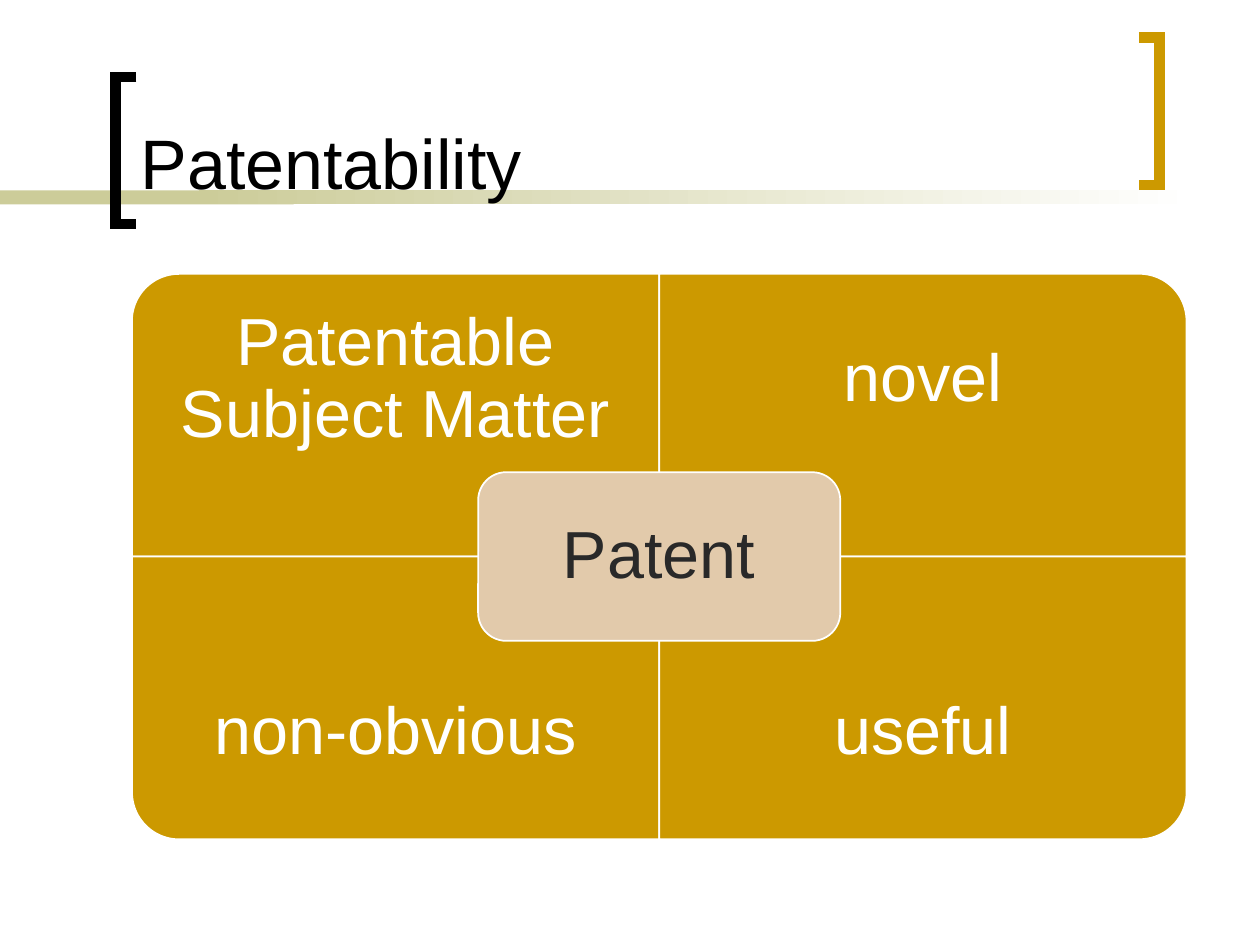
from dataclasses import dataclass

from lxml import etree
from pptx import Presentation
from pptx import util as u
from pptx.dml import color
from pptx.enum import shapes, text
from pptx.oxml import ns

HUES = {
    "black": "000000", "white": "FFFFFF", "gold": "CC9900",
    "sage": "CCCC99", "tan": "E2CAAB", "dark": "292929",
}
FONT = "Arial"

# Matrix of four quadrants, in cm
LEFT, TOP = 2.66, 5.52
WIDE, HIGH = 10.63, 5.7
TEXT_HIGH = 0.75 * HIGH
HUB_WIDE, HUB_HIGH = 7.3, 3.4


@dataclass
class Quad:
    label: str
    col: int
    row: int
    turn: int


@dataclass
class Bracket:
    hue: str
    spine: float
    tip: float
    top: float


QUADS = [
    Quad("Patentable Subject Matter", 0, 0, 270),
    Quad("novel", 1, 0, 0),
    Quad("non-obvious", 0, 1, 180),
    Quad("useful", 1, 1, 90),
]
BRACKETS = [
    Bracket("black", 2.33, 2.75, 1.55),
    Bracket("gold", 23.38, 22.96, 0.76),
]
BRACKET_HIGH = 2.97


def rgb(hue: str) -> color.RGBColor:
    return color.RGBColor.from_string(HUES[hue])


def add_box(slide, kind, x: float, y: float, w: float, h: float,
            fill: str, line: str = ""):
    box = slide.shapes.add_shape(kind, u.Cm(x), u.Cm(y), u.Cm(w), u.Cm(h))
    box.shadow.inherit = False
    box.fill.solid()
    box.fill.fore_color.rgb = rgb(fill)
    if line:
        box.line.color.rgb = rgb(line)
        box.line.width = u.Pt(1)
    else:
        box.line.fill.background()
    return box


def add_text(shape, words: str, size: int, hue: str, pad: float) -> None:
    frame = shape.text_frame
    frame.word_wrap = True
    frame.vertical_anchor = text.MSO_ANCHOR.MIDDLE
    frame.margin_left = frame.margin_right = u.Cm(pad)
    frame.margin_top = frame.margin_bottom = u.Cm(pad)
    para = frame.paragraphs[0]
    para.alignment = text.PP_ALIGN.CENTER
    para.line_spacing = 0.9
    add_run(para, words, size, hue)


def add_run(para, words: str, size: int, hue: str) -> None:
    run = para.add_run()
    run.text = words
    run.font.name = FONT
    run.font.size = u.Pt(size)
    run.font.color.rgb = rgb(hue)


def add_label(slide, x: float, y: float, w: float, h: float):
    return slide.shapes.add_textbox(u.Cm(x), u.Cm(y), u.Cm(w), u.Cm(h))


def draw_bracket(slide, part: Bracket) -> None:
    low = part.top + BRACKET_HIGH
    pen = slide.shapes.build_freeform(u.Cm(part.tip), u.Cm(part.top))
    ends = [(part.spine, part.top), (part.spine, low), (part.tip, low)]
    pen.add_line_segments([(u.Cm(x), u.Cm(y)) for x, y in ends], close=False)
    shape = pen.convert_to_shape()
    shape.shadow.inherit = False
    shape.fill.background()
    shape.line.color.rgb = rgb(part.hue)
    shape.line.width = u.Pt(6)
    # Square corners
    join = etree.SubElement(shape.line._get_or_add_ln(), ns.qn("a:miter"))
    join.set("lim", "800000")


def draw_quad(slide, quad: Quad) -> None:
    x, y = LEFT + quad.col * WIDE, TOP + quad.row * HIGH
    # A quarter turn swaps the sides around the same centre
    w, h = (HIGH, WIDE) if quad.turn % 180 else (WIDE, HIGH)
    box = add_box(slide, shapes.MSO_SHAPE.ROUND_1_RECTANGLE,
                  x + (WIDE - w) / 2, y + (HIGH - h) / 2, w, h,
                  "gold", "white")
    box.rotation = quad.turn
    label = add_label(slide, x, y + quad.row * (HIGH - TEXT_HIGH),
                      WIDE, TEXT_HIGH)
    add_text(label, quad.label, 38, "white", 0.75)


def main() -> None:
    deck = Presentation()
    deck.slide_width, deck.slide_height = u.Cm(25.4), u.Cm(19.05)
    slide = deck.slides.add_slide(deck.slide_layouts[6])

    # Band behind the title, fading to the right
    rect = shapes.MSO_SHAPE.RECTANGLE
    add_box(slide, rect, 0, 3.84, 5.92, 0.28, "sage")
    fade = add_box(slide, rect, 4.01, 3.84, 20.12, 0.28, "sage")
    fade.fill.gradient()
    fade.fill.gradient_angle = 0
    for stop, hue, place in zip(fade.fill.gradient_stops,
                                ("sage", "white"), (0, 1)):
        stop.color.rgb = rgb(hue)
        stop.position = place

    # Brackets and title
    for part in BRACKETS:
        draw_bracket(slide, part)
    title = add_label(slide, 2.59, 0.28, 19.89, 3.94).text_frame
    title.word_wrap = True
    title.vertical_anchor = text.MSO_ANCHOR.BOTTOM
    add_run(title.paragraphs[0], "Patentability", 40, "black")

    # Quadrants and the hub at their meeting point
    for quad in QUADS:
        draw_quad(slide, quad)
    hub = add_box(slide, shapes.MSO_SHAPE.ROUNDED_RECTANGLE,
                  LEFT + WIDE - HUB_WIDE / 2, TOP + HIGH - HUB_HIGH / 2,
                  HUB_WIDE, HUB_HIGH, "tan", "white")
    add_text(hub, "Patent", 38, "dark", 0.4)

    deck.save("out.pptx")


if __name__ == "__main__":
    main()
